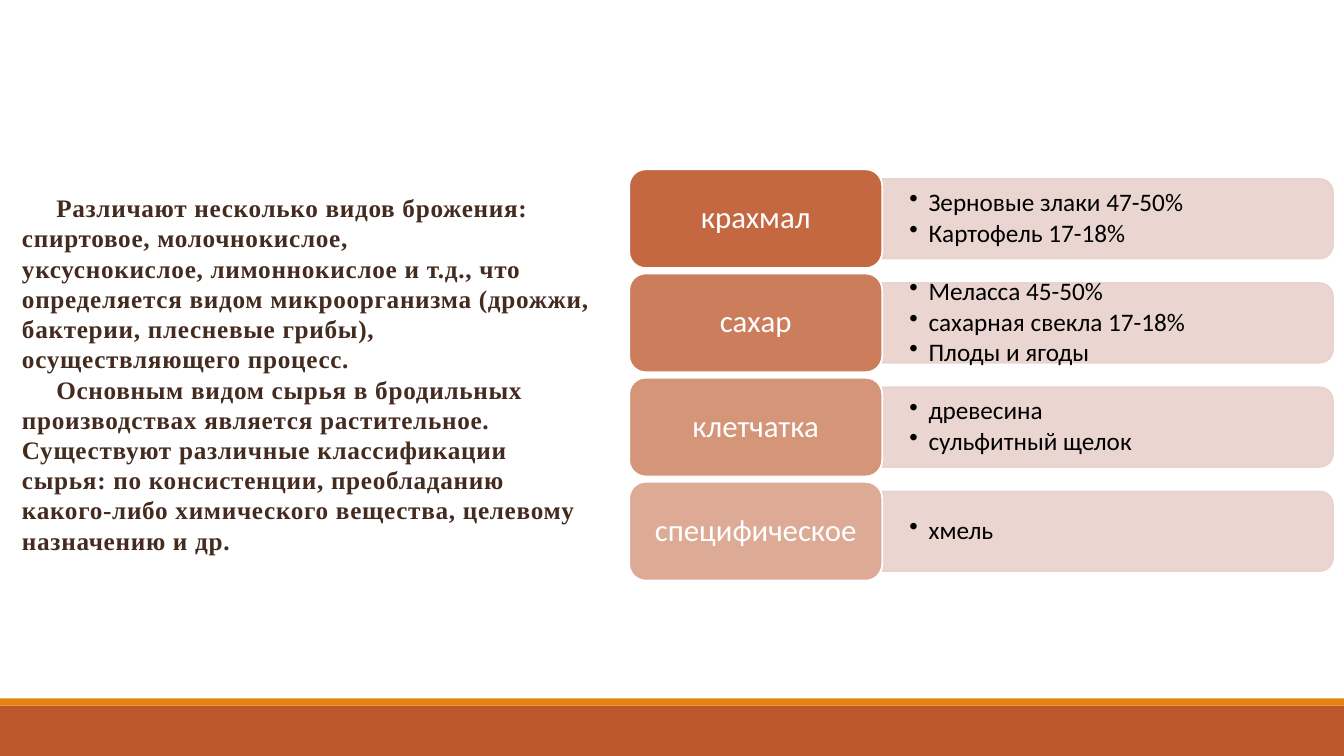
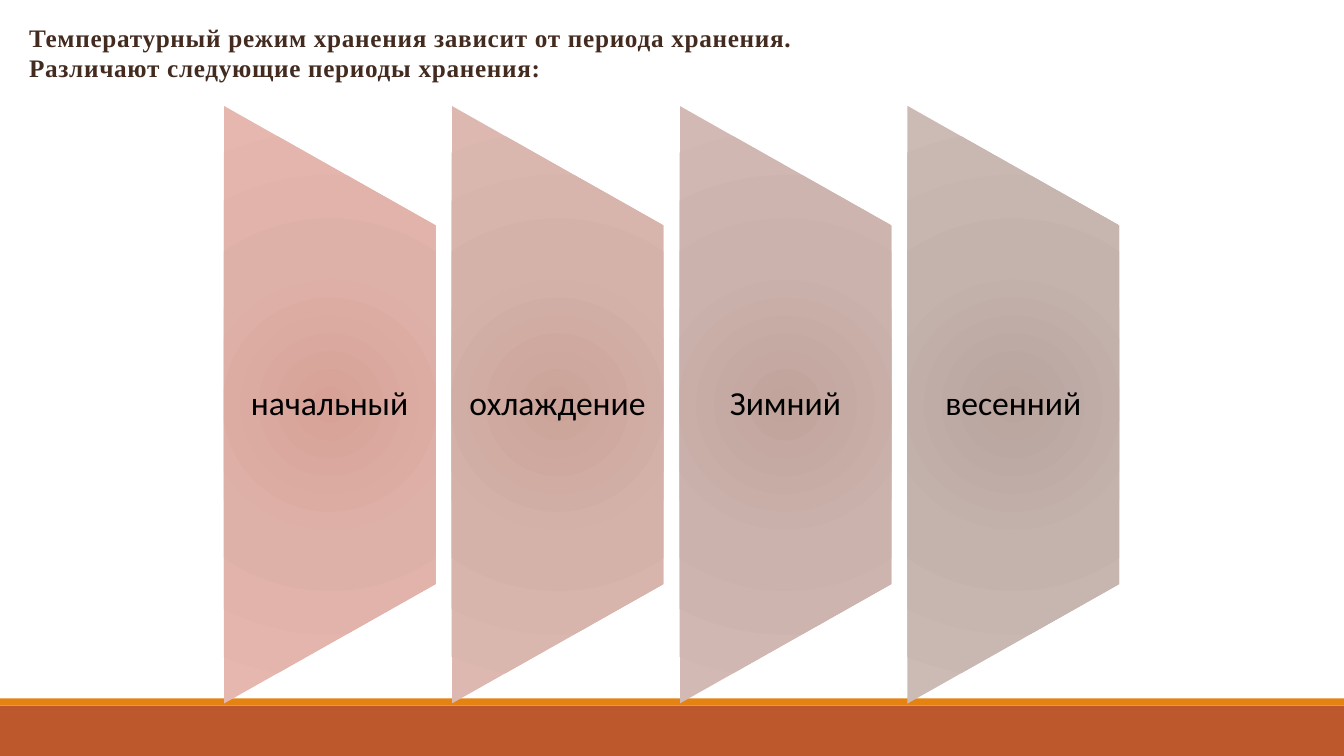
from dataclasses import dataclass

from pptx import Presentation
from pptx.dml.color import RGBColor
from pptx.enum.shapes import MSO_SHAPE as Preset
from pptx.enum.text import MSO_ANCHOR as Anchor, PP_ALIGN as Align
from pptx.oxml import parse_xml
from pptx.oxml.ns import nsdecls
from pptx.oxml.xmlchemy import OxmlElement
from pptx.shapes.autoshape import Shape
from pptx.slide import Slide
from pptx.util import Inches, Pt

RUST, ORANGE, BLUSH = "BD582C", "E48312", "E8D1CD"
BROWN, BLACK, WHITE = "432B20", "000000", "FFFFFF"
SERIF, SANS = "Times New Roman", "Calibri"

ROW_TOP, ROW_SPAN, ROW_HEIGHT = 1.68, 3.1, 0.98
LABEL_LEFT, LABEL_WIDTH = 6.24, 2.51
BAR_WIDTH, BAR_HEIGHT = 4.47, 0.79
LABEL_ALPHAS = (90, 50)
PANEL_LEFT, PANEL_TOP, PANEL_PITCH = 2.22, 1.05, 2.26
PANEL_WIDTH, PANEL_HEIGHT = 2.1, 5.93


@dataclass(frozen=True)
class Area:
    left: float
    top: float
    width: float
    height: float


@dataclass(frozen=True)
class Line:
    text: str
    indent: float = 0


@dataclass(frozen=True)
class Material:
    name: str
    sources: tuple[str, ...]


@dataclass(frozen=True)
class Period:
    name: str
    center: str
    middle: str
    edge: str


INTRO = [
    Line("Различают несколько видов брожения: спиртовое, молочнокислое,", 0.34),
    Line("уксуснокислое, лимоннокислое и т.д., что определяется видом "
         "микроорганизма (дрожжи, бактерии, плесневые грибы), "
         "осуществляющего процесс."),
    Line("Основным видом сырья в бродильных производствах является "
         "растительное. Существуют различные классификации сырья: по "
         "консистенции, преобладанию какого-либо химического вещества, "
         "целевому назначению и др.", 0.34),
]
MATERIALS = [
    Material("крахмал", ("Зерновые злаки 47-50%", "Картофель 17-18%")),
    Material("сахар", ("Меласса 45-50%", "сахарная свекла 17-18%", "Плоды и ягоды")),
    Material("клетчатка", ("древесина", "сульфитный щелок")),
    Material("специфическое", ("хмель",)),
]
STORAGE = [
    Line("Температурный режим хранения зависит от периода хранения."),
    Line("Различают следующие периоды хранения:"),
]
PERIODS = [
    Period("начальный", "D7A197", "DEB1A8", "E6B7AE"),
    Period("охлаждение", "CBA399", "D4B2AA", "DCB8B0"),
    Period("Зимний", "C1A49C", "CBB2AC", "D3B9B3"),
    Period("весенний", "B9A49E", "C4B2AD", "CCBAB5"),
]


def color(value: str) -> RGBColor:
    return RGBColor.from_string(value)


def place(area: Area) -> tuple[Inches, ...]:
    return tuple(Inches(v) for v in (area.left, area.top, area.width, area.height))


def upright(area: Area) -> Area:
    """Return the frame that covers the area after a quarter turn."""
    shift = (area.width - area.height) / 2
    return Area(area.left + shift, area.top - shift, area.height, area.width)


def add_preset(page: Slide, preset: Preset, area: Area, turn: int = 0) -> Shape:
    frame = upright(area) if turn else area
    shape = page.shapes.add_shape(preset, *place(frame))
    shape.rotation = turn
    shape.shadow.inherit = False
    shape.line.fill.background()
    return shape


def set_alpha(shape: Shape, query: str, percent: float) -> None:
    for tint in shape.element.spPr.xpath(query):
        alpha = OxmlElement("a:alpha")
        alpha.set("val", str(round(percent * 1000)))
        tint.append(alpha)


def paint(shape: Shape, fill: str, alpha: float = 100,
          line: str = "", line_alpha: float = 100) -> None:
    shape.fill.solid()
    shape.fill.fore_color.rgb = color(fill)
    if alpha < 100:
        set_alpha(shape, "./a:solidFill/a:srgbClr", alpha)
    if line:
        shape.line.color.rgb = color(line)
        shape.line.width = Pt(1.25)
        if line_alpha < 100:
            set_alpha(shape, "./a:ln/a:solidFill/a:srgbClr", line_alpha)


def paint_radial(shape: Shape, period: Period) -> None:
    stops = "".join(
        f'<a:gs pos="{position}"><a:srgbClr val="{tint}"/></a:gs>'
        for position, tint in ((0, period.center), (45000, period.middle),
                               (100000, period.edge)))
    gradient = parse_xml(
        f'<a:gradFill {nsdecls("a")} rotWithShape="1"><a:gsLst>{stops}</a:gsLst>'
        '<a:path path="circle"><a:fillToRect l="100000" t="100000" '
        'r="100000" b="100000"/></a:path></a:gradFill>')
    shape.element.spPr.find(gradient.tag.replace("gradFill", "prstGeom")).addnext(gradient)


def write(box: Shape, lines: list[Line], *, size: float, ink: str, font: str = SANS,
          bold: bool = False, tracking: float = 0, align: Align = Align.LEFT,
          anchor: Anchor = Anchor.MIDDLE, spacing: float | Pt = 0.9,
          gap: float = 0, bullet: str = "",
          insets: tuple[float, float] = (0.1, 0.05)) -> None:
    frame = box.text_frame
    frame.word_wrap = True
    frame.vertical_anchor = anchor
    frame.margin_left = frame.margin_right = Inches(insets[0])
    frame.margin_top = frame.margin_bottom = Inches(insets[1])
    for number, line in enumerate(lines):
        para = frame.add_paragraph() if number else frame.paragraphs[0]
        para.alignment = align
        para.line_spacing = spacing
        if number and gap:
            para.space_before = Pt(gap)
        props = para._p.get_or_add_pPr()
        props.set("indent", str(Inches(line.indent)))
        if bullet:
            props.set("marL", str(Inches(-line.indent)))
            mark = OxmlElement("a:buChar")
            mark.set("char", bullet)
            props.append(mark)
        span = para.add_run()
        span.text = line.text
        span.font.name = font
        span.font.size = Pt(size)
        span.font.bold = bold
        span.font.color.rgb = color(ink)
        if tracking:
            span._r.get_or_add_rPr().set("spc", str(round(tracking * 100)))


def add_heading(page: Slide, area: Area, lines: list[Line]) -> None:
    write(page.shapes.add_textbox(*place(area)), lines, size=18, ink=BROWN,
          font=SERIF, bold=True, tracking=0.5, anchor=Anchor.TOP, spacing=Pt(21.6))


def add_page(deck: Presentation) -> Slide:
    """Add a blank slide with the two bands at its foot."""
    page = deck.slides.add_slide(deck.slide_layouts[6])
    for top, height, fill in ((7, 0.5, RUST), (6.93, 0.07, ORANGE)):
        paint(add_preset(page, Preset.RECTANGLE, Area(0, top, 13.33, height)), fill)
    return page


def add_material(page: Slide, material: Material, step: float) -> None:
    """Draw one row; step runs from 0 for the first to 1 for the last."""
    top = ROW_TOP + ROW_SPAN * step
    bar_area = Area(LABEL_LEFT + LABEL_WIDTH, top + (ROW_HEIGHT - BAR_HEIGHT) / 2,
                    BAR_WIDTH, BAR_HEIGHT)
    bar = add_preset(page, Preset.ROUND_2_SAME_RECTANGLE, bar_area, turn=90)
    paint(bar, BLUSH, alpha=90, line=BLUSH, line_alpha=90)
    write(page.shapes.add_textbox(*place(bar_area)),
          [Line(source, -0.19) for source in material.sources],
          size=18, ink=BLACK, gap=2.4, bullet="•", insets=(0.27, 0.14))

    label = add_preset(page, Preset.ROUNDED_RECTANGLE,
                       Area(LABEL_LEFT, top, LABEL_WIDTH, ROW_HEIGHT))
    first, last = LABEL_ALPHAS
    paint(label, RUST, alpha=first + (last - first) * step, line=WHITE)
    write(label, [Line(material.name)], size=22, ink=WHITE, align=Align.CENTER)


def add_period(page: Slide, period: Period, number: int) -> None:
    area = Area(PANEL_LEFT + PANEL_PITCH * number, PANEL_TOP, PANEL_WIDTH, PANEL_HEIGHT)
    panel = add_preset(page, Preset.FLOWCHART_MANUAL_OPERATION, area, turn=270)
    paint_radial(panel, period)
    write(page.shapes.add_textbox(*place(area)), [Line(period.name)],
          size=24, ink=BLACK, align=Align.CENTER)


def main() -> None:
    deck = Presentation()
    deck.slide_width, deck.slide_height = Inches(13.33), Inches(7.5)

    page = add_page(deck)
    add_heading(page, Area(0.12, 1.86, 5.86, 3.74), INTRO)
    for number, material in enumerate(MATERIALS):
        add_material(page, material, number / (len(MATERIALS) - 1))

    page = add_page(deck)
    for number, period in enumerate(PERIODS):
        add_period(page, period, number)
    add_heading(page, Area(0.19, 0.17, 10.3, 0.71), STORAGE)

    deck.save("out.pptx")


if __name__ == "__main__":
    main()
